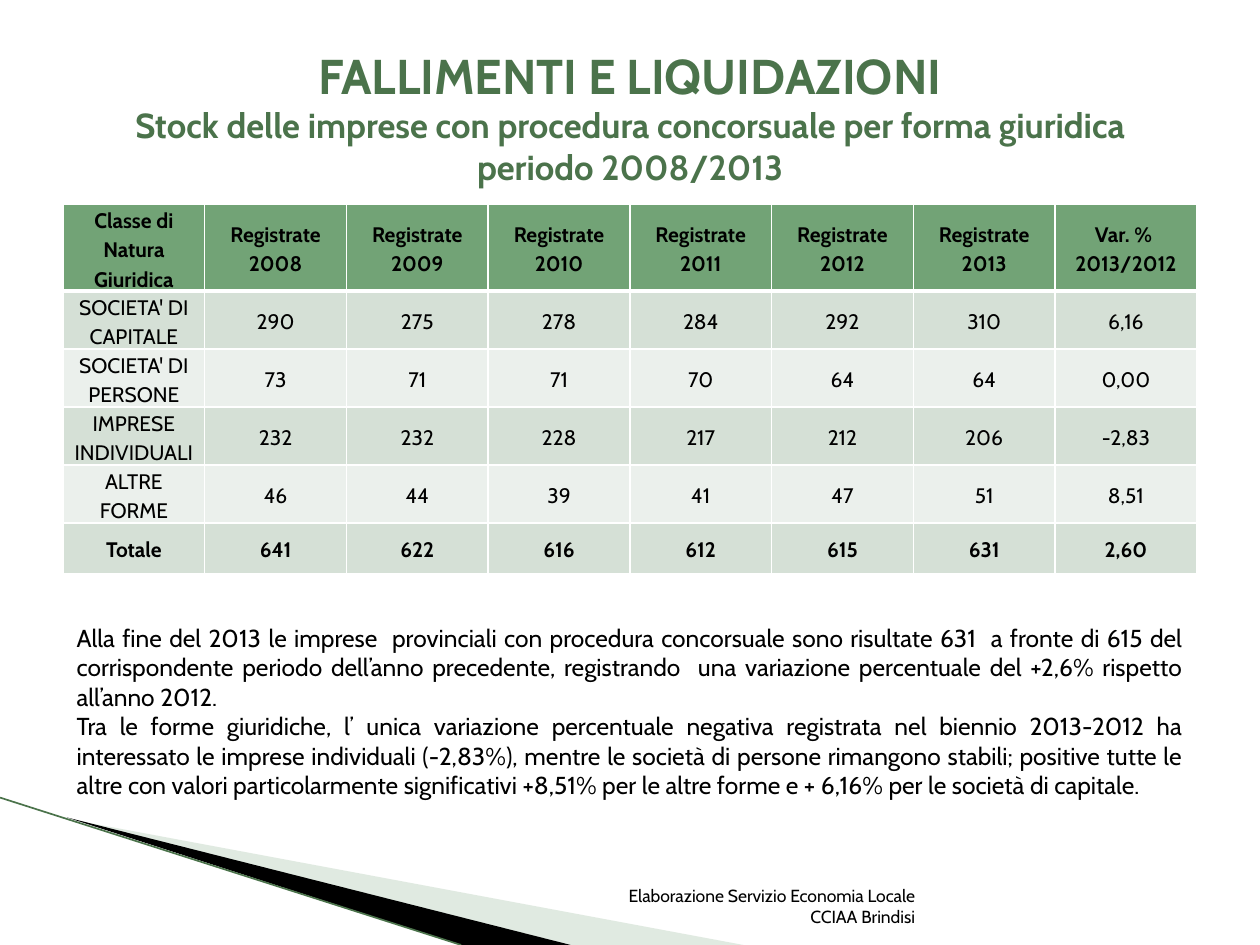
"""Build the slide on bankruptcies and liquidations, 2008-2013."""
import lxml.etree
import pptx
import pptx.dml.color
import pptx.enum.shapes
import pptx.enum.text
import pptx.oxml.ns
import pptx.util

Align = pptx.enum.text.PP_ALIGN
Anchor = pptx.enum.text.MSO_ANCHOR
Color = pptx.dml.color.RGBColor.from_string
qn = pptx.oxml.ns.qn

theme = {
    "font": "Cabin",
    "ink": "000000", "title": "4B734B", "wedge": "B3CBB5", "edge": "4B734B",
    "header": "72A376", "bands": ["EBF0EC", "D5E0D6"], "border": "FFFFFF",
    "title_size": 27.9, "subtitle_size": 19.8, "body_size": 14,
    "table_size": 12, "source_size": 10,
}

deck = pptx.Presentation()
deck.slide_width, deck.slide_height = pptx.util.Inches(10), pptx.util.Inches(7.5)
page = deck.slides.add_slide(deck.slide_layouts[6])
column, row = deck.slide_width / 100, deck.slide_height / 100


def write(para, text, size, color, bold=False):
    span = para.add_run()
    formats = {"name": theme["font"], "size": pptx.util.Pt(size), "bold": bold}
    span.text = text
    for name, value in formats.items():
        setattr(span.font, name, value)
    span.font.color.rgb = Color(color)


def add_box(left, top, width, height, anchor):
    box = page.shapes.add_textbox(
        int(left * column), int(top * row), int(width * column), int(height * row))
    for name, value in {"word_wrap": True, "vertical_anchor": anchor}.items():
        setattr(box.text_frame, name, value)
    return box.text_frame


wedges = [
    ([(5.5, 86.7), (59, 100), (45.3, 100)], theme["wedge"], 40),
    ([(5.3, 86.5), (45.3, 100), (36.6, 100)], theme["ink"], 100),
]
for points, color, opacity in wedges:
    corners = [(int(x * column), int(y * row)) for x, y in points]
    builder = page.shapes.build_freeform(*corners[0], scale=1)
    builder.add_line_segments(corners[1:], close=True)
    wedge = builder.convert_to_shape()
    wedge.shadow.inherit = False
    wedge.fill.solid()
    wedge.fill.fore_color.rgb = Color(color)
    wedge.line.fill.background()
    if opacity < 100:
        shade = wedge.fill._xPr.find(".//" + qn("a:srgbClr"))
        lxml.etree.SubElement(shade, qn("a:alpha"), val=str(opacity * 1000))

edge = page.shapes.add_connector(
    pptx.enum.shapes.MSO_CONNECTOR.STRAIGHT,
    0, int(84.4 * row), int(36.6 * column), int(100 * row))
edge.line.color.rgb = Color(theme["edge"])
edge.line.width = pptx.util.Pt(0.95)
lxml.etree.SubElement(edge._element.spPr, qn("a:effectLst"))

para = add_box(47.9, 93.47, 25.7, 5.33, Anchor.BOTTOM).paragraphs[0]
para.alignment = Align.RIGHT
write(para, "Elaborazione Servizio Economia Locale CCIAA Brindisi",
      theme["source_size"], theme["ink"])

para = add_box(5, 4, 90, 16.67, Anchor.MIDDLE).paragraphs[0]
para.alignment = Align.CENTER
write(para, "FALLIMENTI E LIQUIDAZIONI", theme["title_size"], theme["title"], True)
para.add_line_break()
write(para, "Stock delle imprese con procedura concorsuale per forma giuridica "
      "periodo 2008/2013", theme["subtitle_size"], theme["title"], True)

comments = [
    "Alla fine del 2013 le imprese  provinciali con procedura concorsuale sono "
    "risultate 631  a fronte di 615 del corrispondente periodo dell’anno precedente, "
    "registrando  una variazione percentuale del +2,6% rispetto all’anno 2012.",
    "Tra le forme giuridiche, l’ unica variazione percentuale negativa registrata nel "
    "biennio 2013-2012 ha interessato le imprese individuali (-2,83%), mentre le "
    "società di persone rimangono stabili; positive tutte le altre con valori "
    "particolarmente significativi +8,51% per le altre forme e + 6,16% per le società "
    "di capitale.",
]
body = add_box(5.1, 63.6, 89.8, 23.33, Anchor.MIDDLE)
for index, comment in enumerate(comments):
    para = body.add_paragraph() if index else body.paragraphs[0]
    para.alignment = Align.JUSTIFY
    write(para, comment, theme["body_size"], theme["ink"])

years = [f"Registrate {year}" for year in range(2008, 2014)]
records = [
    ["Classe di Natura Giuridica", *years, "Var. %  2013/2012"],
    ["SOCIETA' DI CAPITALE", "290", "275", "278", "284", "292", "310", "6,16"],
    ["SOCIETA' DI PERSONE", "73", "71", "71", "70", "64", "64", "0,00"],
    ["IMPRESE INDIVIDUALI", "232", "232", "228", "217", "212", "206", "-2,83"],
    ["ALTRE FORME", "46", "44", "39", "41", "47", "51", "8,51"],
    ["Totale", "641", "622", "616", "612", "615", "631", "2,60"],
]
heights = [9.07, 6.13, 6.13, 6.13, 6.13, 5.33]
last = len(records) - 1
cell_format = {
    "vertical_anchor": Anchor.MIDDLE,
    "margin_left": pptx.util.Inches(0.05), "margin_right": pptx.util.Inches(0.05),
    "margin_top": 0, "margin_bottom": 0,
}
table = page.shapes.add_table(
    len(records), len(records[0]), int(5 * column), int(21.6 * row),
    int(90 * column), int(sum(heights) * row)).table
for r, record in enumerate(records):
    table.rows[r].height = int(heights[r] * row)
    for c, text in enumerate(record):
        cell = table.cell(r, c)
        for name, value in cell_format.items():
            setattr(cell, name, value)
        para = cell.text_frame.paragraphs[0]
        for name, value in {"alignment": Align.CENTER, "line_spacing": 1.15}.items():
            setattr(para, name, value)
        write(para, text, theme["table_size"], theme["ink"], r in (0, last))
        properties = cell._tc.get_or_add_tcPr()
        for side in ("L", "R", "T", "B"):
            thick = (r, side) in ((0, "B"), (1, "T"))
            border = lxml.etree.SubElement(
                properties, qn(f"a:ln{side}"), w=str(pptx.util.Pt(3 if thick else 1)))
            paint = lxml.etree.SubElement(border, qn("a:solidFill"))
            lxml.etree.SubElement(paint, qn("a:srgbClr"), val=theme["border"])
        cell.fill.solid()
        cell.fill.fore_color.rgb = Color(theme["bands"][r % 2] if r else theme["header"])

deck.save("out.pptx")
